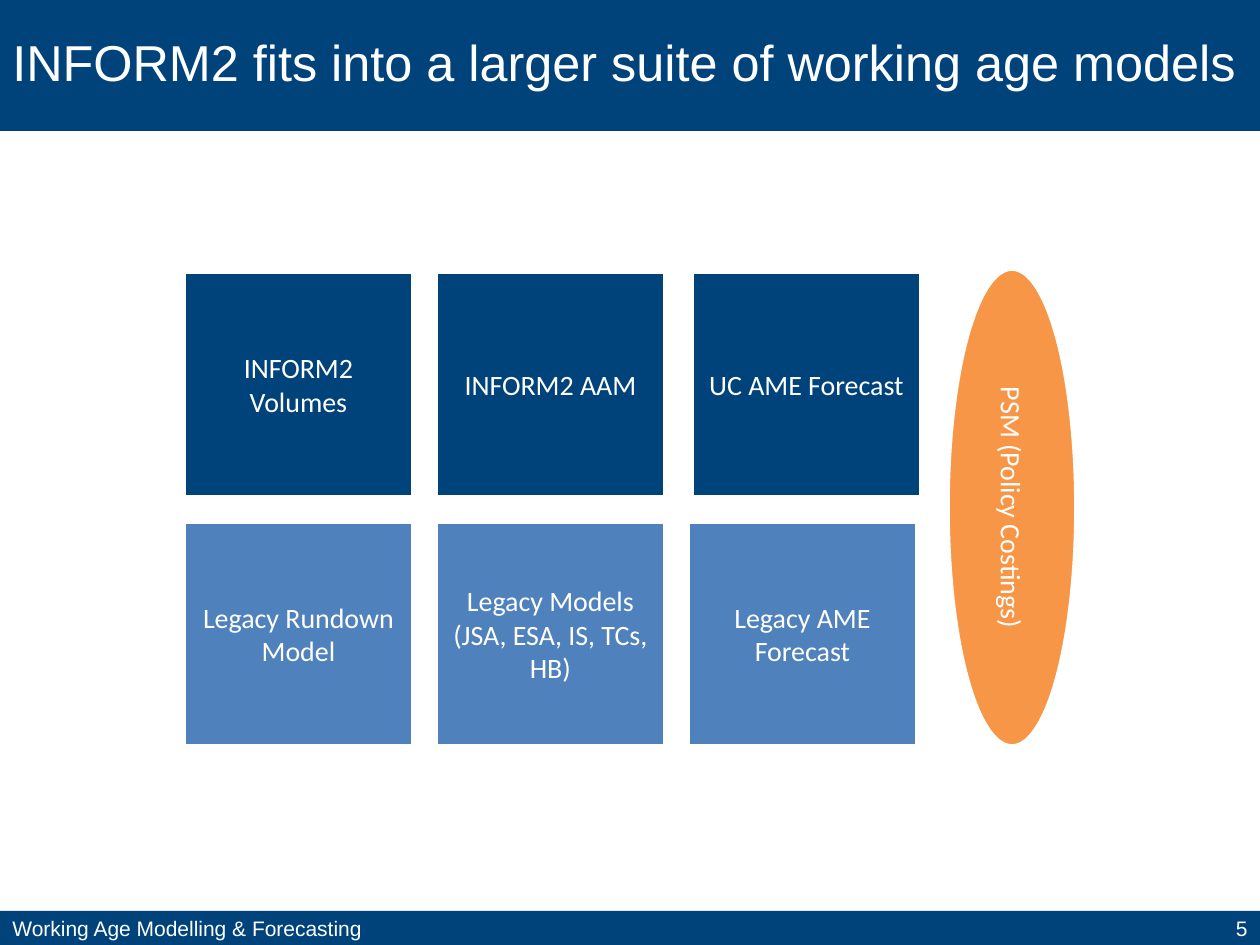
"""Build the slide on the suite of working age models."""
import pptx
import pptx.util
from pptx.dml.color import RGBColor
from pptx.enum.shapes import MSO_SHAPE
from pptx.enum.text import MSO_ANCHOR, PP_ALIGN

PX = 914400 // 126
NAVY = RGBColor(0x00, 0x43, 0x7B)
BLUE = RGBColor(0x4F, 0x81, 0xBD)
ORANGE = RGBColor(0xF7, 0x96, 0x46)
WHITE = RGBColor(0xFF, 0xFF, 0xFF)

MODEL_ROWS = [
    (273, 223, NAVY, [(185, "INFORM2 Volumes"), (437, "INFORM2 AAM"), (693, "UC AME Forecast")]),
    (523, 222, BLUE, [(185, "Legacy Rundown Model"),
                      (437, "Legacy Models (JSA, ESA, IS, TCs, HB)"),
                      (689, "Legacy AME Forecast")]),
]


def add_filled(s, kind, box, fill, text, size, font, align):
    sp = s.shapes.add_shape(kind, *(v * PX for v in box))
    sp.shadow.inherit = False
    sp.fill.solid()
    sp.fill.fore_color.rgb = fill
    sp.line.fill.background()
    tf = sp.text_frame
    tf.word_wrap = True
    tf.vertical_anchor = MSO_ANCHOR.MIDDLE
    p = tf.paragraphs[0]
    p.alignment = align
    r = p.add_run()
    r.text = text
    r.font.size = pptx.util.Pt(size)
    r.font.name = font
    r.font.color.rgb = WHITE
    return sp


def add_bar(s, box, text, size, align=PP_ALIGN.LEFT):
    return add_filled(s, MSO_SHAPE.RECTANGLE, box, NAVY, text, size, "Arial", align)


def add_model(s, kind, box, fill, text):
    sp = add_filled(s, kind, box, fill, text, 16, "Calibri", PP_ALIGN.CENTER)
    sp.line.color.rgb = WHITE
    sp.line.width = pptx.util.Pt(1.5)
    return sp


def main():
    prs = pptx.Presentation()
    prs.slide_width = pptx.util.Inches(10)
    prs.slide_height = pptx.util.Inches(7.5)
    s = prs.slides.add_slide(prs.slide_layouts[6])

    title = add_bar(s, (0, 0, 1260, 131), "INFORM2 fits into a larger suite of working age models", 28.8)
    title.text_frame.paragraphs[0].line_spacing = 0.9
    add_bar(s, (0, 911, 1043, 34), "Working Age Modelling & Forecasting", 12)
    add_bar(s, (1043, 911, 217, 34), "5", 12, PP_ALIGN.RIGHT)

    for y, h, fill, models in MODEL_ROWS:
        for x, text in models:
            add_model(s, MSO_SHAPE.RECTANGLE, (x, y, 227, h), fill, text)
    costings = add_model(s, MSO_SHAPE.OVAL, (774, 444, 476, 127), ORANGE, "PSM (Policy Costings)")
    costings.rotation = 90

    prs.save("out.pptx")


if __name__ == "__main__":
    main()
